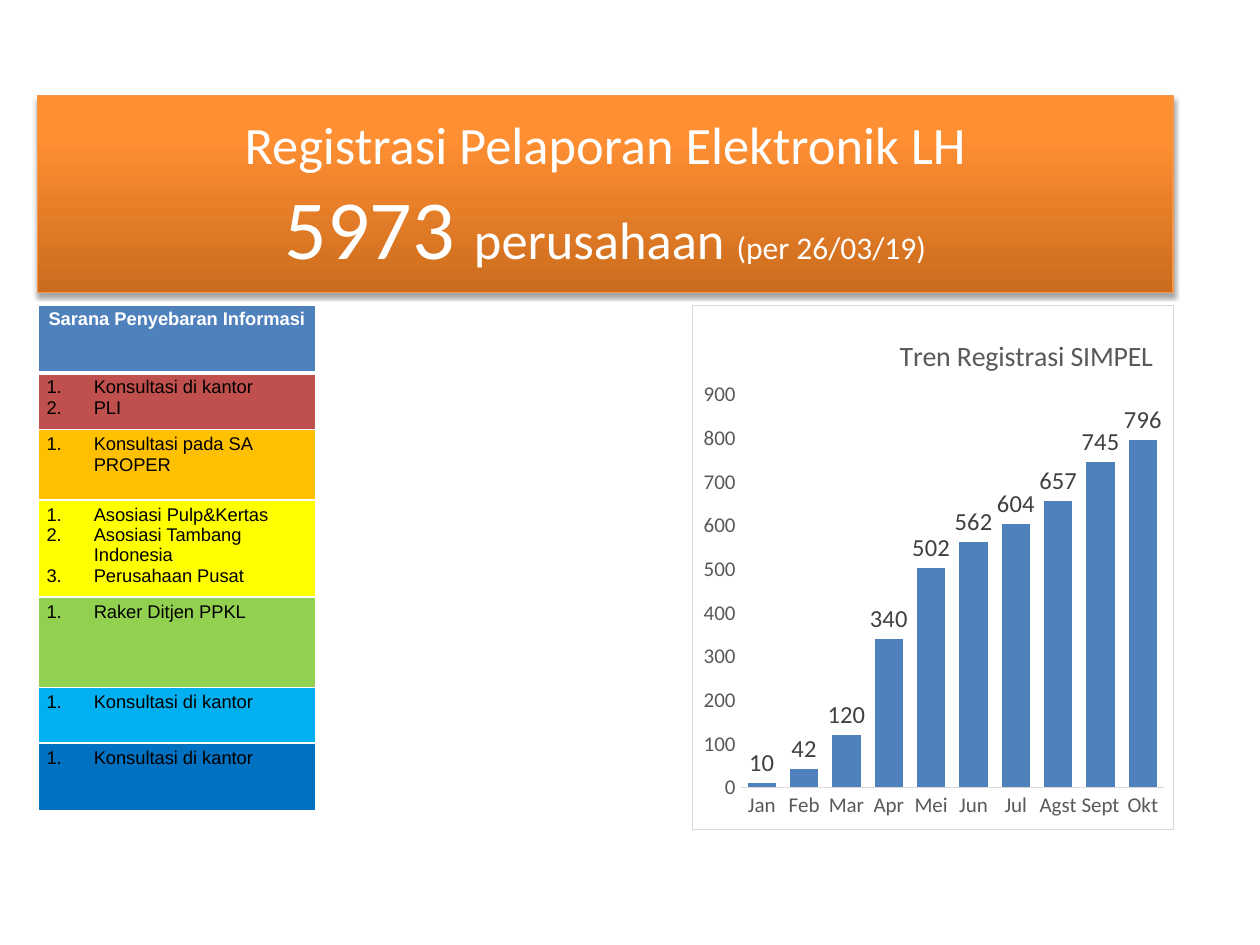
from dataclasses import dataclass

import pptx
import pptx.chart.data
import pptx.dml.color
import pptx.enum.chart
import pptx.enum.shapes
import pptx.enum.text
import pptx.oxml
import pptx.oxml.ns
import pptx.util
from lxml import etree

Pt = pptx.util.Pt


@dataclass(frozen=True)
class Theme:
    body_font: str = "Calibri"
    table_font: str = "Arial"
    white: str = "FFFFFF"
    black: str = "000000"
    blue: str = "4F81BD"
    orange_dark: str = "CB6C1D"
    orange_light: str = "FF8F33"
    orange_line: str = "F79646"
    grey_line: str = "D9D9D9"
    grey_text: str = "595959"
    label_text: str = "404040"
    count_size: float = 48
    headline_size: float = 30
    date_size: float = 18
    table_size: float = 10.5
    axis_size: float = 12
    label_size: float = 14
    chart_title_size: float = 16


@dataclass(frozen=True)
class Box:
    left: float
    top: float
    width: float
    height: float

    def lengths(self) -> tuple:
        return Pt(self.left), Pt(self.top), Pt(self.width), Pt(self.height)


@dataclass(frozen=True)
class Row:
    height: float
    color: str
    items: tuple


THEME = Theme()
BANNER = Box(21.6, 54.7, 648.7, 112.3)
TABLE = Box(21.6, 174.2, 159.1, 289.5)
CHART = Box(395.3, 174.2, 275.8, 300.2)

HEADER = Row(38.9, THEME.blue, ("Sarana Penyebaran Informasi",))
CHANNELS = (
    Row(32.4, "C0504D", ("Konsultasi di kantor", "PLI")),
    Row(40.3, "FFC000", ("Konsultasi pada SA PROPER",)),
    Row(55.4, "FFFF00", ("Asosiasi Pulp&Kertas", "Asosiasi Tambang Indonesia",
                         "Perusahaan Pusat")),
    Row(51.8, "92D050", ("Raker Ditjen PPKL",)),
    Row(31.7, "00B0F0", ("Konsultasi di kantor",)),
    Row(38.9, "0070C0", ("Konsultasi di kantor",)),
)
REGISTRATIONS = {"Jan": 10, "Feb": 42, "Mar": 120, "Apr": 340, "Mei": 502,
                 "Jun": 562, "Jul": 604, "Agst": 657, "Sept": 745, "Okt": 796}


def rgb(color: str) -> pptx.dml.color.RGBColor:
    return pptx.dml.color.RGBColor.from_string(color)


def set_font(font, name: str, size: float, color: str, bold: bool = False) -> None:
    font.name, font.size, font.bold = name, Pt(size), bold
    font.color.rgb = rgb(color)


def add_xml(parent, content: str):
    """Append one drawing element, given as markup with its namespaces."""
    element = pptx.oxml.parse_xml(content)
    parent.append(element)
    return element


def drawing(tag: str, content: str) -> str:
    return f'<{tag} {pptx.oxml.ns.nsdecls("a", "c")}{content}'


# Banner with the headline
def add_banner(slide) -> None:
    shape = slide.shapes.add_shape(
        pptx.enum.shapes.MSO_SHAPE.RECTANGLE, *BANNER.lengths())
    shape.fill.gradient()
    shape.fill.gradient_angle = 90
    stops = ((0, THEME.orange_dark), (0.8, THEME.orange_light))
    for stop, (position, color) in zip(shape.fill.gradient_stops, stops):
        stop.position = position
        stop.color.rgb = rgb(color)
    shape.line.color.rgb = rgb(THEME.orange_line)
    shape.line.width = Pt(0.75)
    add_xml(shape._element.spPr, drawing(
        "a:effectLst", '><a:outerShdw blurRad="40000" dist="23000" dir="5400000"'
        ' rotWithShape="0"><a:srgbClr val="000000"><a:alpha val="35000"/>'
        '</a:srgbClr></a:outerShdw></a:effectLst>'))

    frame = shape.text_frame
    frame.word_wrap = True
    frame.vertical_anchor = pptx.enum.text.MSO_ANCHOR.MIDDLE
    paragraph = frame.paragraphs[0]
    paragraph.alignment = pptx.enum.text.PP_ALIGN.CENTER
    lines = (
        (("Registrasi Pelaporan Elektronik LH", THEME.headline_size),),
        (("5973 ", THEME.count_size), ("perusahaan ", THEME.headline_size),
         ("(per 26/03/19)", THEME.date_size)),
    )
    for index, line in enumerate(lines):
        if index:
            paragraph.add_line_break()
        for text, size in line:
            run = paragraph.add_run()
            run.text = text
            set_font(run.font, THEME.body_font, size, THEME.white)


# Table of information channels
def set_borders(cell, bottom_width: float) -> None:
    properties = cell._tc.get_or_add_tcPr()
    widths = {"lnL": 1, "lnR": 1, "lnT": 1, "lnB": bottom_width}
    for index, (side, width) in enumerate(widths.items()):
        border = pptx.oxml.parse_xml(drawing(
            f"a:{side}", f' w="{Pt(width)}"><a:solidFill><a:srgbClr '
            f'val="{THEME.white}"/></a:solidFill></a:{side}>'))
        properties.insert(index, border)


def number_paragraph(paragraph) -> None:
    properties = paragraph._p.get_or_add_pPr()
    properties.set("marL", str(Pt(27)))
    properties.set("indent", str(Pt(-27)))
    bullet = etree.Element(pptx.oxml.ns.qn("a:buAutoNum"), type="arabicPeriod")
    properties.insert(0, bullet)


def fill_cell(cell, row: Row, is_header: bool) -> None:
    cell.fill.solid()
    cell.fill.fore_color.rgb = rgb(row.color)
    cell.margin_left = cell.margin_right = Pt(5)
    cell.margin_top = cell.margin_bottom = Pt(2.6)
    set_borders(cell, 3 if is_header else 1)
    cell.text = "\n".join(row.items)
    for paragraph in cell.text_frame.paragraphs:
        color = THEME.white if is_header else THEME.black
        set_font(paragraph.font, THEME.table_font, THEME.table_size, color, is_header)
        if is_header:
            paragraph.alignment = pptx.enum.text.PP_ALIGN.CENTER
        else:
            number_paragraph(paragraph)


def add_channel_table(slide) -> None:
    rows = (HEADER, *CHANNELS)
    table = slide.shapes.add_table(len(rows), 1, *TABLE.lengths()).table
    for index, row in enumerate(rows):
        table.rows[index].height = Pt(row.height)
        fill_cell(table.cell(index, 0), row, row is HEADER)


# Chart of monthly registrations
def layout(target: str, x: float, y: float, size: str = "") -> str:
    return drawing("c:layout", f'><c:manualLayout>{target}<c:xMode val="edge"/>'
                   f'<c:yMode val="edge"/><c:x val="{x}"/><c:y val="{y}"/>{size}'
                   '</c:manualLayout></c:layout>')


def add_registration_chart(slide) -> None:
    enums = pptx.enum.chart
    data = pptx.chart.data.CategoryChartData()
    data.categories = list(REGISTRATIONS)
    data.add_series("Series 1", list(REGISTRATIONS.values()))
    chart = slide.shapes.add_chart(
        enums.XL_CHART_TYPE.COLUMN_CLUSTERED, *CHART.lengths(), data).chart
    set_font(chart.font, THEME.body_font, THEME.axis_size, THEME.black)
    chart.has_legend = False

    title_frame = chart.chart_title.text_frame
    title_frame.text = "Tren Registrasi SIMPEL"
    set_font(title_frame.paragraphs[0].font, THEME.body_font,
             THEME.chart_title_size, THEME.grey_text)
    title = chart.chart_title._element
    for automatic in title.findall(pptx.oxml.ns.qn("c:layout")):
        title.remove(automatic)
    title.insert(1, pptx.oxml.parse_xml(layout("", 0.42, 0.05)))

    for axis in (chart.category_axis, chart.value_axis):
        axis.major_tick_mark = axis.minor_tick_mark = enums.XL_TICK_MARK.NONE
        axis.has_major_gridlines = False
        set_font(axis.tick_labels.font, THEME.body_font, THEME.axis_size, THEME.grey_text)
    chart.category_axis.format.line.color.rgb = rgb(THEME.grey_line)
    chart.category_axis.format.line.width = Pt(0.75)
    chart.value_axis.format.line.fill.background()
    chart.value_axis.minimum_scale, chart.value_axis.maximum_scale = 0, 900
    chart.value_axis.major_unit = 100

    plot = chart.plots[0]
    plot.gap_width, plot.overlap, plot.vary_by_categories = 50, -27, False
    series = plot.series[0]
    series.format.fill.solid()
    series.format.fill.fore_color.rgb = rgb(THEME.blue)
    labels = series.data_labels
    labels.show_value = True
    labels.position = enums.XL_LABEL_POSITION.OUTSIDE_END
    set_font(labels.font, THEME.body_font, THEME.label_size, THEME.label_text)

    chart_space = chart._chartSpace
    plot_area = chart_space.chart.plotArea
    for automatic in plot_area.findall(pptx.oxml.ns.qn("c:layout")):
        plot_area.remove(automatic)
    plot_area.insert(0, pptx.oxml.parse_xml(layout(
        '<c:layoutTarget val="inner"/>', 0.1, 0.17,
        '<c:w val="0.88"/><c:h val="0.75"/>')))
    chart_space.chart.addnext(pptx.oxml.parse_xml(drawing(
        "c:spPr", f'><a:solidFill><a:srgbClr val="{THEME.white}"/></a:solidFill>'
        f'<a:ln w="{Pt(0.75)}"><a:solidFill><a:srgbClr val="{THEME.grey_line}"/>'
        '</a:solidFill></a:ln></c:spPr>')))


def main() -> None:
    presentation = pptx.Presentation()
    presentation.slide_width, presentation.slide_height = Pt(720), Pt(540)
    slide = presentation.slides.add_slide(presentation.slide_layouts[6])
    add_banner(slide)
    add_channel_table(slide)
    add_registration_chart(slide)
    presentation.save("out.pptx")


if __name__ == "__main__":
    main()
